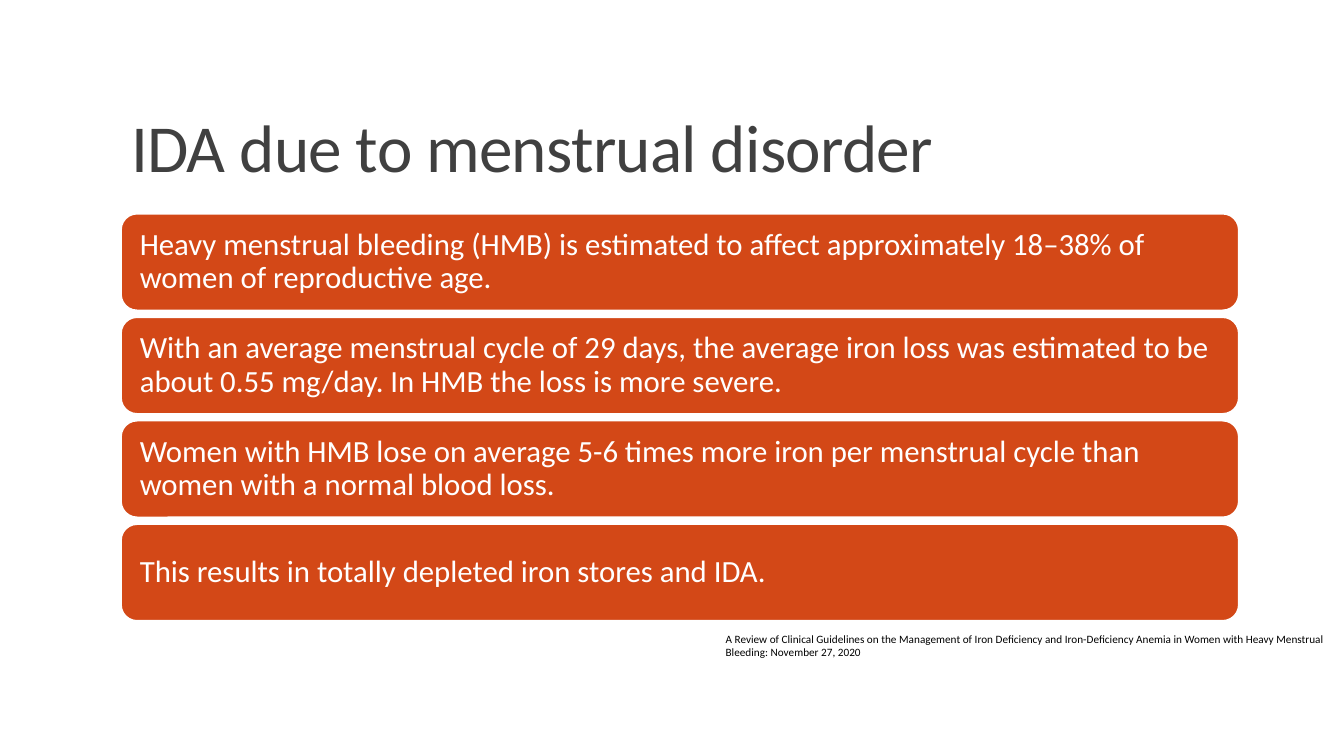
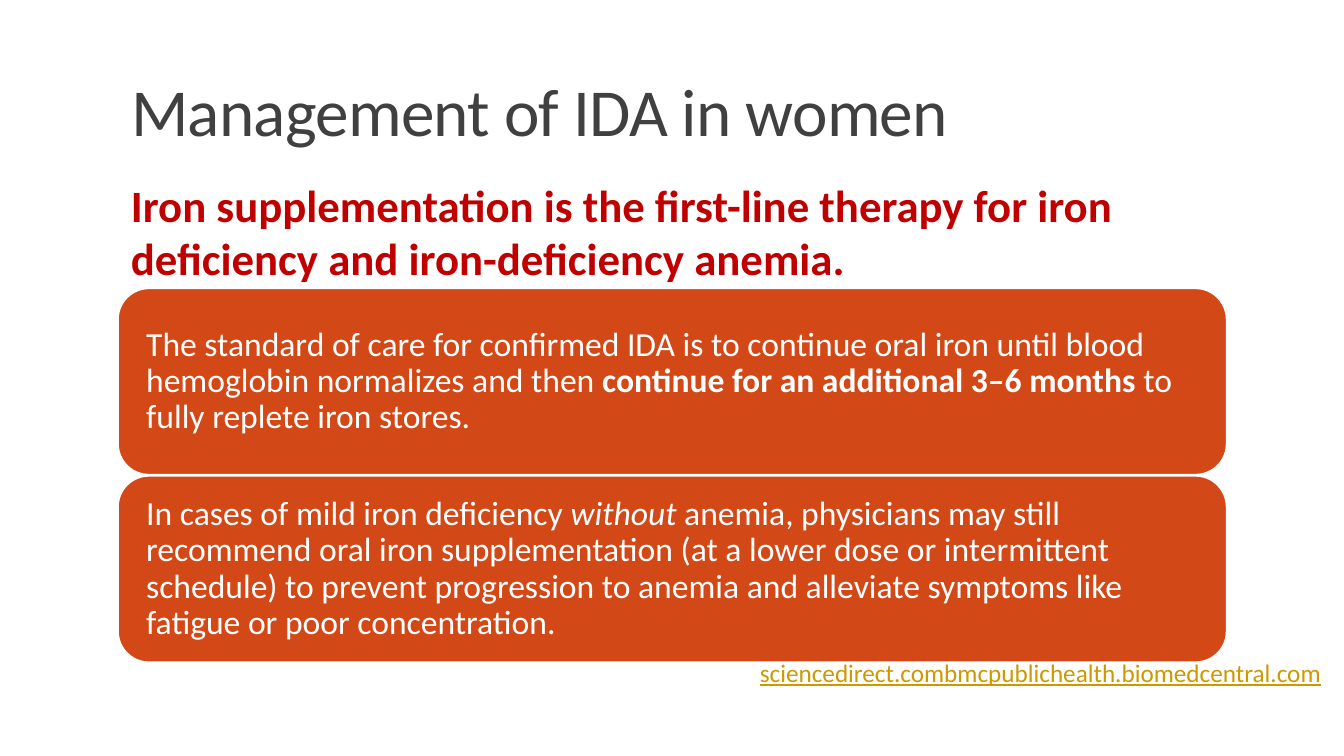
import pptx
import pptx.util
import pptx.dml.color
import pptx.enum.shapes
import pptx.enum.text

RGBColor = pptx.dml.color.RGBColor
Pt = pptx.util.Pt
ANCHOR = pptx.enum.text.MSO_ANCHOR
ALIGN = pptx.enum.text.PP_ALIGN

PX = 9144  # 100 px to the inch
FONT = "Calibri"
WHITE = RGBColor(0xFF, 0xFF, 0xFF)
BLACK = RGBColor(0x00, 0x00, 0x00)
GREY = RGBColor(0x40, 0x40, 0x40)
ORANGE = RGBColor(0xD3, 0x48, 0x17)
RED = RGBColor(0xC0, 0x00, 0x00)
GOLD = RGBColor(0xCC, 0x99, 0x00)

HMB_FACTS = [
    "Heavy menstrual bleeding (HMB) is estimated to affect approximately 18–38% of women of "
    "reproductive age.",
    "With an average menstrual cycle of 29 days, the average iron loss was estimated to be about "
    "0.55 mg/day. In HMB the loss is more severe.",
    "Women with HMB lose on average 5-6 times more iron per menstrual cycle than women with a "
    "normal blood loss.",
    "This results in totally depleted iron stores and IDA.",
]
CARE_ADVICE = [
    [("The standard of care for confirmed IDA is to continue oral iron until blood hemoglobin "
      "normalizes and then ", ""),
     ("continue for an additional 3–6 months", "bold"),
     (" to fully replete iron stores.", "")],
    [("In cases of mild iron deficiency ", ""),
     ("without", "italic"),
     (" anemia, physicians may still recommend oral iron supplementation (at a lower dose or "
      "intermittent schedule) to prevent progression to anemia and alleviate symptoms like "
      "fatigue or poor concentration.", "")],
]


def emu(box):
    return [round(v * PX) for v in box]


def write(p, text, size, color):
    """Fill a paragraph from a string or from (text, emphasis) pairs."""
    p.alignment = ALIGN.LEFT
    p.font.name, p.font.size, p.font.color.rgb = FONT, Pt(size), color
    for part, emphasis in [(text, "")] if isinstance(text, str) else text:
        r = p.add_run()
        r.text = part
        if emphasis == "bold":
            r.font.bold = True
        elif emphasis == "italic":
            r.font.italic = True


def add_titled_slide(prs, title, top):
    s = prs.slides.add_slide(prs.slide_layouts[5])
    sp = s.shapes.title
    sp.left, sp.top, sp.width, sp.height = emu((120, top, 1100, 159))
    tf = sp.text_frame
    tf.word_wrap = True
    tf.auto_size = pptx.enum.text.MSO_AUTO_SIZE.NONE
    tf.vertical_anchor = ANCHOR.BOTTOM
    p = tf.paragraphs[0]
    write(p, title, 48, GREY)
    p.line_spacing = 0.85
    p.runs[0].font._element.set("spc", "-50")
    return s


def add_text(s, box, text, size, color):
    tf = s.shapes.add_textbox(*emu(box)).text_frame
    tf.word_wrap = True
    p = tf.paragraphs[0]
    write(p, text, size, color)
    return p


def add_panels(s, box, texts, panel_height, inset, size):
    """Spread rounded panels of one height evenly down the box."""
    left, top, width, height = box
    pitch = (height - panel_height) / (len(texts) - 1)
    for i, text in enumerate(texts):
        sp = s.shapes.add_shape(pptx.enum.shapes.MSO_SHAPE.ROUNDED_RECTANGLE,
                                *emu((left, top + i * pitch, width, panel_height)))
        sp.shadow.inherit = False
        sp.fill.solid()
        sp.fill.fore_color.rgb = ORANGE
        sp.line.color.rgb = WHITE
        sp.line.width = Pt(1.25)
        tf = sp.text_frame
        tf.word_wrap = True
        tf.vertical_anchor = ANCHOR.MIDDLE
        tf.margin_left = tf.margin_right = inset * PX
        p = tf.paragraphs[0]
        write(p, text, size, WHITE)
        p.line_spacing = 0.9


def build_disorder_slide(prs):
    s = add_titled_slide(prs, "IDA due to menstrual disorder", 31)
    add_panels(s, (120, 212, 1109, 404), HMB_FACTS, 96, 14, 22)
    add_text(s, (710, 622, 615, 37),
             "A Review of Clinical Guidelines on the Management of Iron Deficiency and "
             "Iron-Deficiency Anemia in Women with Heavy Menstrual Bleeding: November 27, 2020",
             8, BLACK)


def build_management_slide(prs):
    s = add_titled_slide(prs, "Management of IDA in women", -5)
    add_panels(s, (117, 286, 1100, 371), CARE_ADVICE, 185, 19, 24)
    source = add_text(s, (744, 647, 667, 40),
                      "sciencedirect.combmcpublichealth.biomedcentral.com", 18, GOLD)
    source.font.underline = True
    lead = add_text(s, (120, 171, 1082, 118),
                    "Iron supplementation is the first-line therapy for iron deficiency and "
                    "iron-deficiency anemia.", 32, RED)
    lead.font.bold = True


def main():
    prs = pptx.Presentation()
    prs.slide_width, prs.slide_height = emu((1333.33, 750))
    build_disorder_slide(prs)
    build_management_slide(prs)
    prs.save("out.pptx")


if __name__ == "__main__":
    main()
